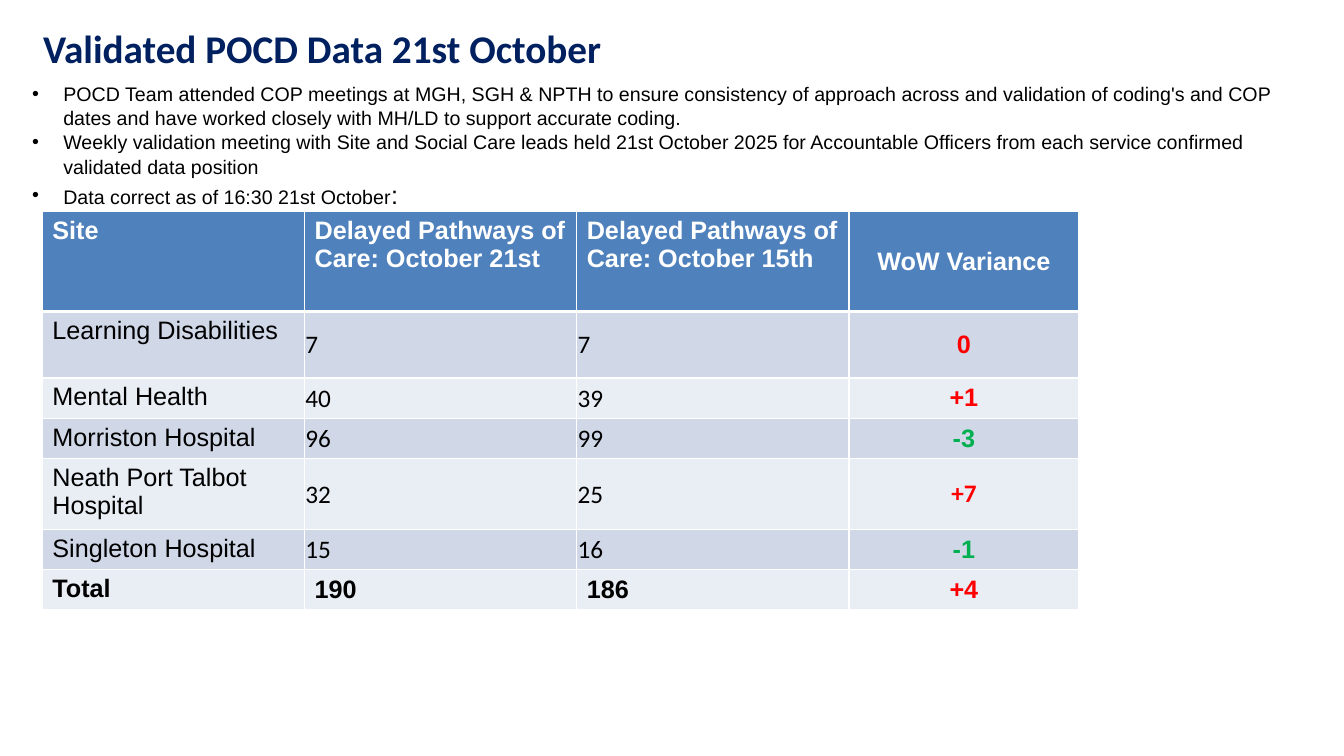
from lxml import etree
from pptx import Presentation
from pptx import util as u
from pptx.dml.color import RGBColor
from pptx.enum import text
from pptx.oxml.ns import qn

COLOURS = {
    "title": "002060", "text": "000000", "white": "FFFFFF", "header": "4F81BD",
    "band_dark": "D0D8E8", "band_light": "E9EDF4", "worse": "FF0000", "better": "00B050",
}
BULLETS = [
    ["POCD Team attended COP meetings at MGH, SGH & NPTH to ensure consistency of approach across "
     "and validation of coding's and COP dates and have worked closely with MH/LD to support accurate coding."],
    ["Weekly validation meeting with Site and Social Care leads held 21st October 2025 for "
     "Accountable Officers from each service confirmed validated data position"],
    ["Data correct as of 16:30 21st October", ":"],
]
ROWS = [
    ("Site", "Delayed Pathways of Care: October 21st", "Delayed Pathways of Care: October 15th", "WoW Variance"),
    ("Learning Disabilities", "7", "7", "0"),
    ("Mental Health", "40", "39", "+1"),
    ("Morriston Hospital", "96", "99", "-3"),
    ("Neath Port Talbot Hospital", "32", "25", "+7"),
    ("Singleton Hospital", "15", "16", "-1"),
    ("Total", "190", "186", "+4"),
]
COLUMN_WIDTHS = [2.6, 2.7, 2.7, 2.28]
ROW_HEIGHTS = [0.99, 0.66, 0.4, 0.4, 0.7, 0.4, 0.4]


def style_font(font, size, colour, name="Arial", bold=False):
    """Set the face, size, weight and colour of a font."""
    font.name, font.size, font.bold = name, u.Pt(size), bold
    font.color.rgb = RGBColor.from_string(COLOURS[colour])


def add_text_frame(slide, box):
    """Add a wrapping text box and return its frame."""
    frame = slide.shapes.add_textbox(*map(u.Inches, box)).text_frame
    frame.word_wrap = True
    return frame


def add_title(slide, box):
    """Write the slide title at the top of its box."""
    paragraph = add_text_frame(slide, box).paragraphs[0]
    paragraph.text = "Validated POCD Data 21st October"
    style_font(paragraph.font, 28, "title", "Calibri", True)


def add_bullets(slide, box):
    """Write the bulleted notes, with any second run set larger."""
    frame = add_text_frame(slide, box)
    frame.auto_size = text.MSO_AUTO_SIZE.SHAPE_TO_FIT_TEXT
    for index, parts in enumerate(BULLETS):
        paragraph = frame.paragraphs[0] if index == 0 else frame.add_paragraph()
        properties = paragraph._p.get_or_add_pPr()
        properties.set("marL", str(u.Inches(0.31)))
        properties.set("indent", str(-u.Inches(0.31)))
        etree.SubElement(properties, qn("a:buFont"), typeface="Arial")
        etree.SubElement(properties, qn("a:buChar"), char="•")
        paragraph.line_spacing = 1.04
        style_font(paragraph.font, 14, "text")
        for part, size in zip(parts, (14, 18)):
            run = paragraph.add_run()
            run.text = part
            style_font(run.font, size, "text")


def set_borders(cell, row):
    """Draw white cell borders, thick below the header row."""
    properties = cell._tc.get_or_add_tcPr()
    widths = {"lnL": 1, "lnR": 1, "lnT": 3 if row == 1 else 1, "lnB": 3 if row == 0 else 1}
    for tag, width in widths.items():
        line = etree.SubElement(properties, qn(f"a:{tag}"), w=str(u.Pt(width)))
        fill = etree.SubElement(line, qn("a:solidFill"))
        etree.SubElement(fill, qn("a:srgbClr"), val=COLOURS["white"])


def fill_cell(cell, row, column):
    """Write and style one table cell by its row and column."""
    header, total, variance = row == 0, row == len(ROWS) - 1, column == 3
    count = column in (1, 2) and not (header or total)
    value = ROWS[row][column]
    set_borders(cell, row)
    cell.fill.solid()
    band = "header" if header else "band_dark" if row % 2 else "band_light"
    cell.fill.fore_color.rgb = RGBColor.from_string(COLOURS[band])
    if variance or (column and not header):
        cell.vertical_anchor = text.MSO_ANCHOR.MIDDLE
    if count:
        cell.margin_left = cell.margin_right = cell.margin_top = u.Inches(0.01)
        cell.margin_bottom = 0
    colour = "white" if header else "text"
    if variance and not header:
        colour = "better" if value.startswith("-") else "worse"
    paragraph = cell.text_frame.paragraphs[0]
    paragraph.text = value
    if variance:
        paragraph.alignment = text.PP_ALIGN.CENTER
    name = "Calibri" if count or value == "+7" else "Arial"
    style_font(paragraph.font, 18, colour, name, header or total or variance)


def add_delay_table(slide, left, top):
    """Build the table of delayed pathways by site."""
    size = (sum(COLUMN_WIDTHS), sum(ROW_HEIGHTS))
    table = slide.shapes.add_table(
        len(ROWS), len(COLUMN_WIDTHS), *map(u.Inches, (left, top, *size))).table
    for column, width in zip(table.columns, COLUMN_WIDTHS):
        column.width = u.Inches(width)
    for index, height in enumerate(ROW_HEIGHTS):
        table.rows[index].height = u.Inches(height)
        for column in range(len(COLUMN_WIDTHS)):
            fill_cell(table.cell(index, column), index, column)


def main():
    """Build the slide and save it."""
    presentation = Presentation()
    presentation.slide_width, presentation.slide_height = u.Inches(13.33), u.Inches(7.5)
    slide = presentation.slides.add_slide(presentation.slide_layouts[6])
    add_title(slide, (0.33, 0.19, 11.5, 1.45))
    add_bullets(slide, (0.22, 0.75, 12.66, 1.35))
    add_delay_table(slide, 0.42, 2.1)
    presentation.save("out.pptx")


if __name__ == "__main__":
    main()
